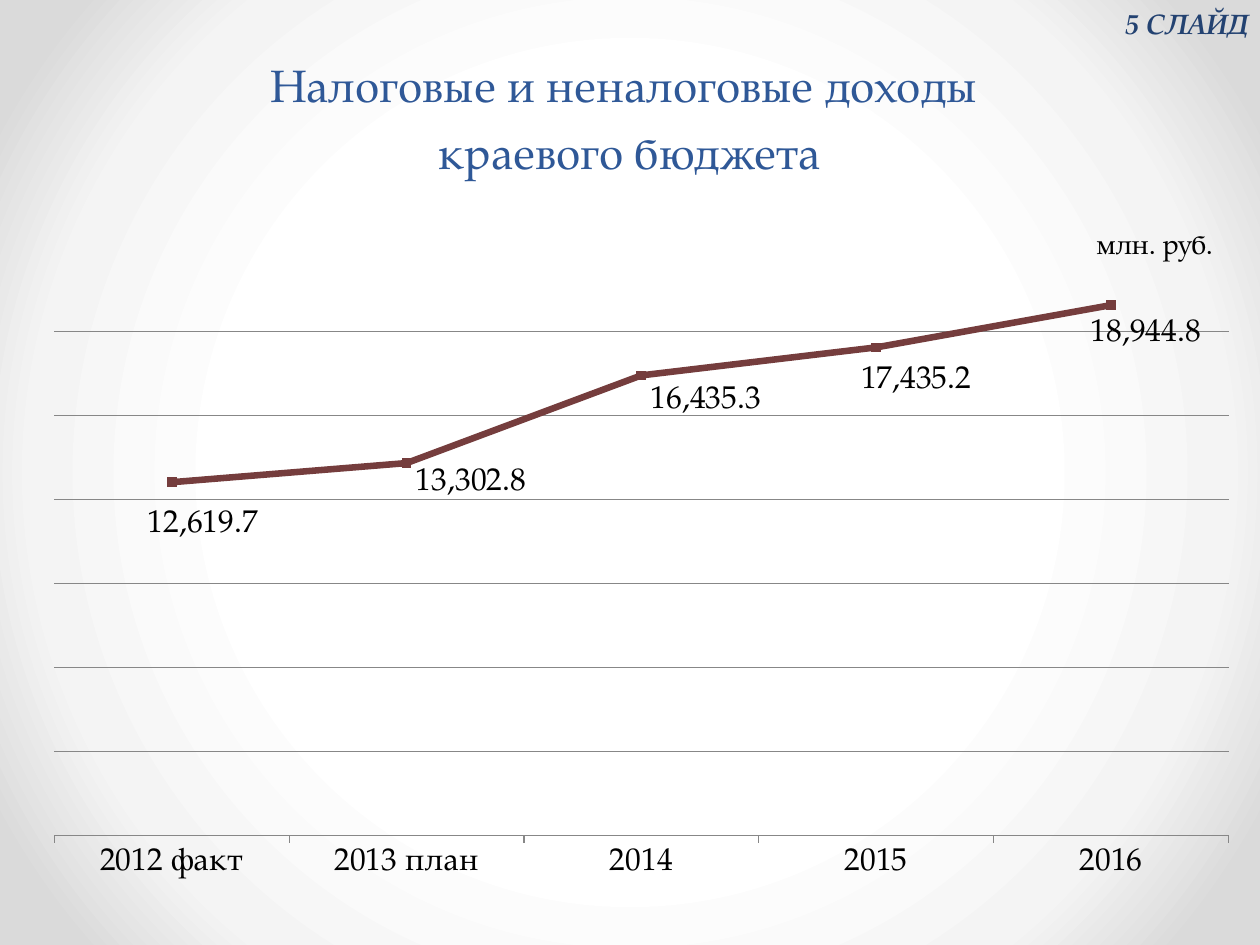
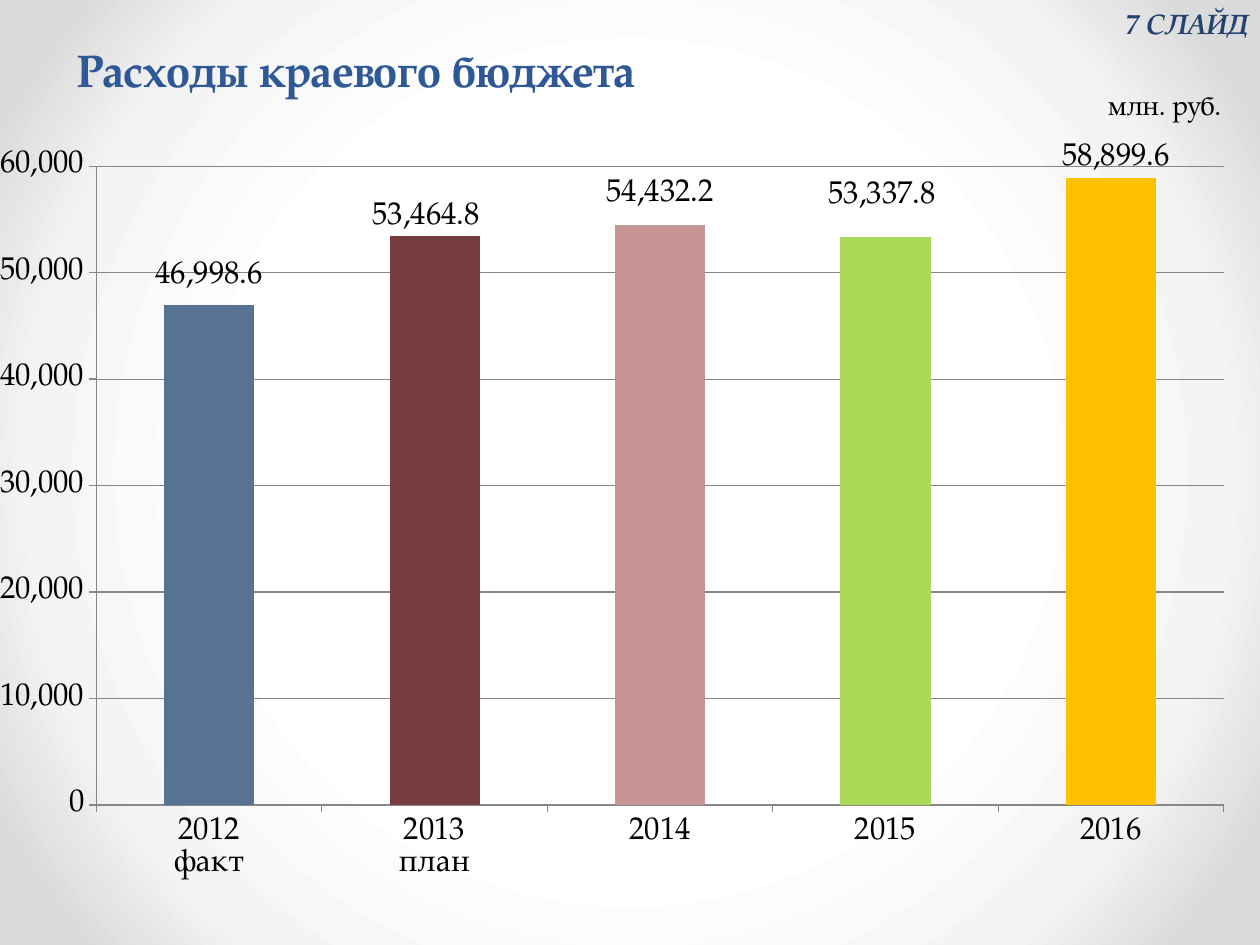
from dataclasses import dataclass

from pptx import Presentation, oxml
from pptx.chart import data as cd
from pptx.dml import color
from pptx.enum import chart as ce
from pptx.enum import text as te
from pptx.oxml import ns
from pptx.util import Pt

RGBColor = color.RGBColor
TITLE_BLUE = RGBColor(0x2F, 0x58, 0x97)
TAG_BLUE = RGBColor(0x23, 0x42, 0x71)
BLACK = RGBColor(0x00, 0x00, 0x00)
GRID_GREY = RGBColor(0x87, 0x87, 0x87)
STEEL = RGBColor(0x57, 0x72, 0x93)
MAROON = RGBColor(0x75, 0x3D, 0x3D)
ROSE = RGBColor(0xC7, 0x94, 0x94)
LIME = RGBColor(0xAB, 0xD9, 0x58)
AMBER = RGBColor(0xFF, 0xC0, 0x00)
GLOW = [
    (50, RGBColor(0xFF, 0xFF, 0xFF)),
    (76, RGBColor(0xF4, 0xF4, 0xF4)),
    (92, RGBColor(0xDA, 0xDA, 0xDA)),
]
FONT = "TeX Gyre Pagella"
LABEL_FORMAT = "#,##0.0"
NO_LEADER_LINES = (
    '<c:extLst><c:ext uri="{CE6537A1-D6FC-4f65-9D91-7224C49458BB}" '
    'xmlns:c15="http://schemas.microsoft.com/office/drawing/2012/chart">'
    '<c15:showLeaderLines val="0"/></c:ext></c:extLst>'
)


@dataclass(frozen=True)
class Box:
    left: float
    top: float
    width: float
    height: float

    def lengths(self) -> list:
        return [Pt(v) for v in (self.left, self.top, self.width, self.height)]


@dataclass(frozen=True)
class Caption:
    wording: str
    box: Box
    align: te.PP_ALIGN
    font: dict
    anchor: te.MSO_ANCHOR = te.MSO_ANCHOR.TOP
    line_pitch: float | None = None


@dataclass(frozen=True)
class BudgetChart:
    kind: ce.XL_CHART_TYPE
    box: Box
    plot: Box
    unit_at: tuple
    years: list
    amounts: list
    colours: list
    label_position: ce.XL_LABEL_POSITION
    label_shifts: list
    scale: dict
    axis_shown: bool


@dataclass(frozen=True)
class BudgetSlide:
    number: int
    title: Caption
    chart: BudgetChart


def apply(target, formats: dict) -> None:
    for name, value in formats.items():
        setattr(target, name, value)


def set_font(font, formats: dict) -> None:
    apply(font, {k: v for k, v in formats.items() if k != "color"})
    font.color.rgb = formats["color"]


def xml(markup: str):
    head, tail = markup.split(">", 1)
    closing = head.endswith("/")
    head = head.rstrip("/") + " " + ns.nsdecls("a", "c")
    return oxml.parse_xml(head + ("/>" if closing else ">") + tail)


def paint_background(master) -> None:
    master.background.fill.gradient()
    stops = "".join(
        f'<a:gs pos="{at * 1000}"><a:srgbClr val="{shade}"/></a:gs>' for at, shade in GLOW
    )
    linear = master.element.xpath("./p:cSld/p:bg//a:gradFill")[0]
    linear.getparent().replace(linear, xml(
        f'<a:gradFill rotWithShape="1"><a:gsLst>{stops}</a:gsLst><a:path path="circle">'
        '<a:fillToRect l="50000" t="50000" r="50000" b="50000"/></a:path></a:gradFill>'
    ))


def add_caption(slide, caption: Caption) -> None:
    frame = slide.shapes.add_textbox(*caption.box.lengths()).text_frame
    apply(frame, {"word_wrap": True, "vertical_anchor": caption.anchor})
    paragraph = frame.paragraphs[0]
    paragraph.text = caption.wording
    paragraph.alignment = caption.align
    if caption.line_pitch:
        paragraph.line_spacing = Pt(caption.line_pitch)
    for run in paragraph.runs:
        set_font(run.font, caption.font)


def place(parent, index: int, values: dict, inner: bool = False, edges: bool = True) -> None:
    for old in parent.xpath("./c:layout"):
        parent.remove(old)
    target = '<c:layoutTarget val="inner"/>' if inner else ""
    modes = '<c:xMode val="edge"/><c:yMode val="edge"/>' if edges else ""
    sizes = "".join(f'<c:{key} val="{value:.4f}"/>' for key, value in values.items())
    parent.insert(index, xml(
        f"<c:layout><c:manualLayout>{target}{modes}{sizes}</c:manualLayout></c:layout>"
    ))


def fraction(box: Box, x: float, y: float) -> dict:
    return {"x": x / box.width, "y": y / box.height}


def label_points(chart, budget: BudgetChart) -> None:
    series = chart.plots[0].series[0]
    apply(series.data_labels, {
        "show_value": True, "number_format": LABEL_FORMAT, "number_format_is_linked": False,
    })
    for index in range(len(budget.amounts)):
        label = series.points[index].data_label
        set_font(label.font, {"name": FONT, "size": Pt(18), "color": BLACK})
        label.position = budget.label_position
    for mark, shift in zip(chart.element.xpath(".//c:dLbl"), budget.label_shifts):
        place(mark, 1, fraction(budget.box, *shift), edges=False)
        mark.insert(2, xml(f'<c:numFmt formatCode="{LABEL_FORMAT}" sourceLinked="0"/>'))
    for leader in chart.element.xpath(".//c:showLeaderLines"):
        leader.set("val", "0")
    chart.element.xpath(".//c:ser/c:dLbls")[0].append(xml(NO_LEADER_LINES))


def style_series(chart, budget: BudgetChart) -> None:
    plot = chart.plots[0]
    plot.vary_by_categories = False
    series = plot.series[0]
    if budget.kind == ce.XL_CHART_TYPE.LINE_MARKERS:
        series.smooth = False
        series.format.line.width = Pt(3.75)
        series.format.line.color.rgb = budget.colours[0]
        apply(series.marker, {"style": ce.XL_MARKER_STYLE.SQUARE, "size": 5})
        series.marker.format.fill.solid()
        series.marker.format.fill.fore_color.rgb = budget.colours[0]
        series.marker.format.line.color.rgb = budget.colours[0]
        return
    apply(plot, {"gap_width": 150, "overlap": 100})
    for index, shade in enumerate(budget.colours):
        fill = series.points[index].format.fill
        fill.solid()
        fill.fore_color.rgb = shade


def style_axes(chart, budget: BudgetChart) -> None:
    values, years = chart.value_axis, chart.category_axis
    apply(values, budget.scale | {"has_major_gridlines": True, "visible": budget.axis_shown})
    apply(values.tick_labels, {"number_format": "#,##0", "number_format_is_linked": False})
    for axis in (values, years):
        axis.major_tick_mark = ce.XL_TICK_MARK.OUTSIDE
        axis.minor_tick_mark = ce.XL_TICK_MARK.NONE
    for part in (values, years, values.major_gridlines):
        part.format.line.width = Pt(0.75)
        part.format.line.color.rgb = GRID_GREY


def add_budget_chart(slide, budget: BudgetChart) -> None:
    table = cd.CategoryChartData(number_format=LABEL_FORMAT)
    table.categories = budget.years
    table.add_series("Series 1", budget.amounts)
    chart = slide.shapes.add_chart(budget.kind, *budget.box.lengths(), table).chart
    set_font(chart.font, {"name": FONT, "size": Pt(18), "color": BLACK})
    chart.has_legend = False
    unit = chart.chart_title.text_frame
    unit.text = "млн. руб."
    set_font(unit.paragraphs[0].runs[0].font,
             {"name": FONT, "size": Pt(16), "bold": False, "color": BLACK})
    style_series(chart, budget)
    style_axes(chart, budget)
    label_points(chart, budget)

    place(chart.element.xpath("./c:chart/c:title")[0], 1, fraction(budget.box, *budget.unit_at))
    area = chart.element.xpath("./c:chart/c:plotArea")[0]
    plot = budget.plot
    place(area, 0, fraction(budget.box, plot.left, plot.top) | {
        "w": plot.width / budget.box.width, "h": plot.height / budget.box.height,
    }, inner=True)
    clear = "<c:spPr><a:noFill/><a:ln><a:noFill/></a:ln></c:spPr>"
    area.append(xml(clear))
    chart.element.xpath("./c:chart")[0].addnext(xml(clear))


def slide_title(wording: str, box: Box, align: te.PP_ALIGN, bold: bool) -> Caption:
    font = {"name": FONT, "size": Pt(26), "bold": bold, "color": TITLE_BLUE}
    return Caption(wording, box, align, font, te.MSO_ANCHOR.BOTTOM, 38)


def slide_tag(number: int) -> Caption:
    font = {"name": FONT, "size": Pt(16), "bold": True, "italic": True, "color": TAG_BLUE}
    return Caption(f"{number} СЛАЙД", Box(620, 0, 100.5, 26.6), te.PP_ALIGN.RIGHT, font)


REVENUE = BudgetSlide(
    5,
    slide_title("Налоговые и неналоговые доходы \vкраевого бюджета",
                Box(36, 20.5, 648, 85), te.PP_ALIGN.CENTER, False),
    BudgetChart(
        kind=ce.XL_CHART_TYPE.LINE_MARKERS,
        box=Box(8.6, 126, 702.7, 398.9),
        plot=Box(22.5, 47.5, 671, 304),
        unit_at=(615, 3.5),
        years=["2012 факт", "2013 план", "2014", "2015", "2016"],
        amounts=[12619.7, 13302.8, 16435.3, 17435.2, 18944.8],
        colours=[MAROON],
        label_position=ce.XL_LABEL_POSITION.RIGHT,
        label_shifts=[(-19, 25), (0, 12), (0, 15), (-14, 20), (-17, 17)],
        scale={"minimum_scale": 0, "maximum_scale": 19000, "major_unit": 3000},
        axis_shown=False,
    ),
)
EXPENSES = BudgetSlide(
    7,
    slide_title("Расходы краевого бюджета",
                Box(37, 12.5, 648, 46.3), te.PP_ALIGN.LEFT, True),
    BudgetChart(
        kind=ce.XL_CHART_TYPE.COLUMN_STACKED,
        box=Box(0, 49, 711.4, 491),
        plot=Box(37, 46, 662, 365),
        unit_at=(628, 1),
        years=["2012\nфакт", "2013\nплан", "2014", "2015", "2016"],
        amounts=[46998.6, 53464.8, 54432.2, 53337.8, 58899.6],
        colours=[STEEL, MAROON, ROSE, LIME, AMBER],
        label_position=ce.XL_LABEL_POSITION.CENTER,
        label_shifts=[(0, -159), (-5, -173), (0, -183), (-2, -185), (3, -190)],
        scale={"minimum_scale": 0, "maximum_scale": 60000, "major_unit": 10000},
        axis_shown=True,
    ),
)


def main() -> None:
    deck = Presentation()
    apply(deck, {"slide_width": Pt(720), "slide_height": Pt(540)})
    paint_background(deck.slide_master)
    for page in (REVENUE, EXPENSES):
        slide = deck.slides.add_slide(deck.slide_layouts[6])
        add_caption(slide, page.title)
        add_budget_chart(slide, page.chart)
        add_caption(slide, slide_tag(page.number))
    deck.save("out.pptx")


if __name__ == "__main__":
    main()
